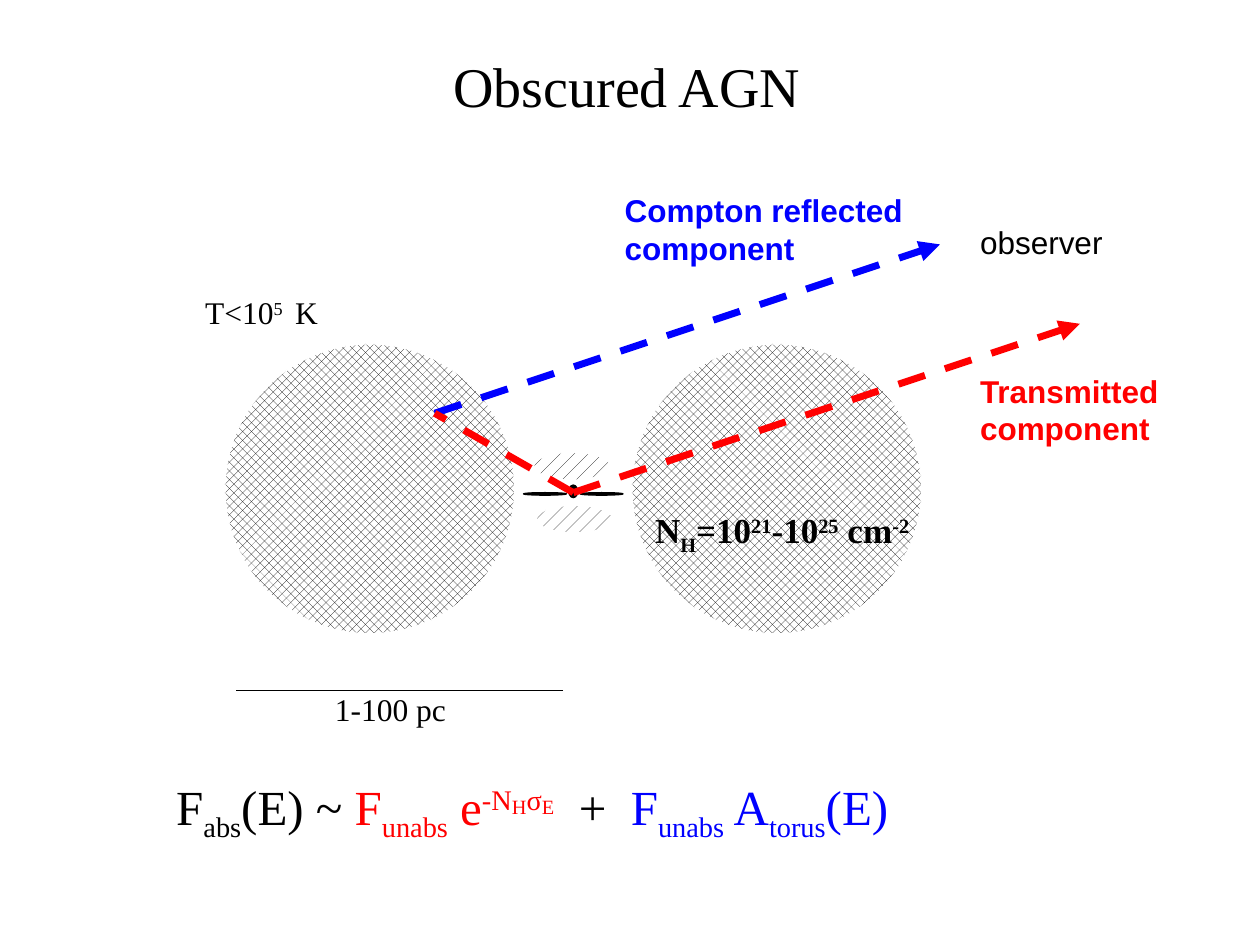
import pptx
import pptx.util
import pptx.dml.color
import pptx.enum.dml
import pptx.enum.shapes
import pptx.enum.text
import pptx.oxml.ns
import lxml.etree

COLOURS = {"black": "000000", "white": "FFFFFF", "red": "FF0000", "blue": "0000FF"}
SERIF, SANS = "Times New Roman", "Arial"
COLUMNS, ROWS = 100, 75  # grid over a slide of 10 by 7.5 inches
SUB, SUP = -25, 30

# Labels: box in grid units, base format, paragraphs of (text, baseline, changes)
HEADINGS = [
    ((13, 61.1, 73.2, 5.7), {"name": SERIF, "size": 28, "colour": "black"}, [[
        ("F",), ("abs", SUB), ("(E) ~ ",),
        ("F", 0, {"colour": "red"}), ("unabs", SUB, {"colour": "red"}),
        (" e", 0, {"colour": "red"}), ("-N", SUP, {"colour": "red"}),
        ("H", SUP, {"colour": "red", "size": 20}), ("σ", SUP, {"colour": "red"}),
        ("E", SUP, {"colour": "red", "size": 20}), ("  +  ",),
        ("F", 0, {"colour": "blue"}), ("unabs", SUB, {"colour": "blue"}),
        (" A", 0, {"colour": "blue"}), ("torus", SUB, {"colour": "blue"}),
        ("(E)", 0, {"colour": "blue"})]]),
    ((35, 3.6, 29.8, 6.3), {"name": SERIF, "size": 32, "colour": "black"},
     [[("Obscured AGN",)]]),
]
LABELS = [
    ((76.8, 29, 16.3, 7), {"name": SANS, "size": 18, "colour": "red", "bold": True},
     [[("Transmitted",)], [("component",)]]),
    ((48.6, 14.7, 24.3, 7.1), {"name": SANS, "size": 18, "colour": "blue", "bold": True},
     [[("Compton reflected",)], [("component",)]]),
    ((76.8, 17.2, 11.7, 4), {"name": SANS, "size": 18, "colour": "black"},
     [[("observer",)]]),
    ((25.6, 54.3, 10.8, 4), {"name": SERIF, "size": 18, "colour": "black"},
     [[("1-100 pc",)]]),
    ((15.3, 22.8, 11.1, 4), {"name": SERIF, "size": 18, "colour": "black"},
     [[("T<10",), ("5 ", SUP), (" K",)]]),
    ((51, 39.9, 22.8, 4.3), {"name": SERIF, "size": 20, "colour": "black", "bold": True},
     [[("N",), ("H", SUB), ("=10",), ("21", SUP), ("-10",), ("25", SUP),
       (" cm",), ("-2", SUP)]]),
]

# Ellipses: centre, size, pattern (None is solid)
CORE = (45.5, 39.1)
DENSE = pptx.enum.dml.MSO_PATTERN.PERCENT_50
SPARSE = pptx.enum.dml.MSO_PATTERN.PERCENT_10
TORUS_OFFSET, DISC_OFFSET, CONE_OFFSET = 16.15, 2.25, 2.1
ELLIPSES = [
    ((CORE[0] - TORUS_OFFSET, 38.8), (23, 23), DENSE),
    ((CORE[0], 39), (0.7, 1), None),
    ((CORE[0] - DISC_OFFSET, 39.2), (3.4, 0.2), None),
    ((CORE[0] + DISC_OFFSET, 39.2), (3.4, 0.2), None),
    ((CORE[0] - 0.1, CORE[1] - CONE_OFFSET), (6.1, 2.2), SPARSE),
    ((CORE[0] + 0.1, CORE[1] + CONE_OFFSET), (6.1, 2.2), SPARSE),
    ((CORE[0] + TORUS_OFFSET, 38.8), (23, 23), DENSE),
]

# Lines: start, end, colour, width, dashed, arrowhead
REFLECTION = (34.5, 32.8)
LINES = [
    (CORE, (85.7, 25.7), "red", 4, True, True),
    (REFLECTION, (74.6, 19.4), "blue", 4, True, True),
    (CORE, REFLECTION, "red", 4, True, False),
    ((44.7, 54.8), (18.7, 54.8), "black", 0.75, False, False),
]

deck = pptx.Presentation()
deck.slide_width, deck.slide_height = pptx.util.Inches(10), pptx.util.Inches(7.5)
page = deck.slides.add_slide(deck.slide_layouts[6])
UNITS = (deck.slide_width / COLUMNS, deck.slide_height / ROWS)


def on_grid(*lengths):
    """Turn alternating columns and rows into slide lengths."""
    return [round(length * UNITS[i % 2]) for i, length in enumerate(lengths)]


def rgb(name):
    return pptx.dml.color.RGBColor.from_string(COLOURS[name])


def add_label(place, base, paragraphs, wrap=False):
    frame = page.shapes.add_textbox(*on_grid(*place)).text_frame
    frame.word_wrap = wrap
    frame.auto_size = pptx.enum.text.MSO_AUTO_SIZE.SHAPE_TO_FIT_TEXT
    for i, spans in enumerate(paragraphs):
        para = frame.paragraphs[0] if i == 0 else frame.add_paragraph()
        for text, *rest in spans:
            baseline, changes = (rest + [0, {}][len(rest):])
            span = para.add_run()
            span.text = text
            style = {**base, **changes}
            span.font.color.rgb = rgb(style.pop("colour"))
            style["size"] = pptx.util.Pt(style["size"])
            for key, value in style.items():
                setattr(span.font, key, value)
            if baseline:
                span._r.get_or_add_rPr().set("baseline", str(baseline * 1000))


def add_ellipse(centre, size, pattern):
    corner = [middle - length / 2 for middle, length in zip(centre, size)]
    shape = page.shapes.add_shape(
        pptx.enum.shapes.MSO_SHAPE.OVAL, *on_grid(*corner, *size))
    shape.shadow.inherit = False
    if pattern is None:
        shape.fill.solid()
    else:
        shape.fill.patterned()
        shape.fill.pattern = pattern
        shape.fill.back_color.rgb = rgb("white")
    shape.fill.fore_color.rgb = rgb("black")
    shape.line.color.rgb = rgb("white" if pattern is not None else "black")
    shape.line.width = pptx.util.Pt(0.75)


def add_line(start, end, colour, width, dashed, arrow):
    line = page.shapes.add_connector(
        pptx.enum.shapes.MSO_CONNECTOR.STRAIGHT, *on_grid(*start, *end))
    line.line.color.rgb = rgb(colour)
    line.line.width = pptx.util.Pt(width)
    if dashed:
        line.line.dash_style = pptx.enum.dml.MSO_LINE.DASH
    if arrow:
        lxml.etree.SubElement(line.line._get_or_add_ln(),
                              pptx.oxml.ns.qn("a:tailEnd"), type="triangle")
    lxml.etree.SubElement(line._element.spPr, pptx.oxml.ns.qn("a:effectLst"))


# Formula and title
for index, heading in enumerate(HEADINGS):
    add_label(*heading, wrap=index == 0)

# Torus, disc and cones
for ellipse in ELLIPSES:
    add_ellipse(*ellipse)

# Light paths and scale bar
for line_data in LINES:
    add_line(*line_data)

# Diagram labels
for label in LABELS:
    add_label(*label)

deck.save("out.pptx")
